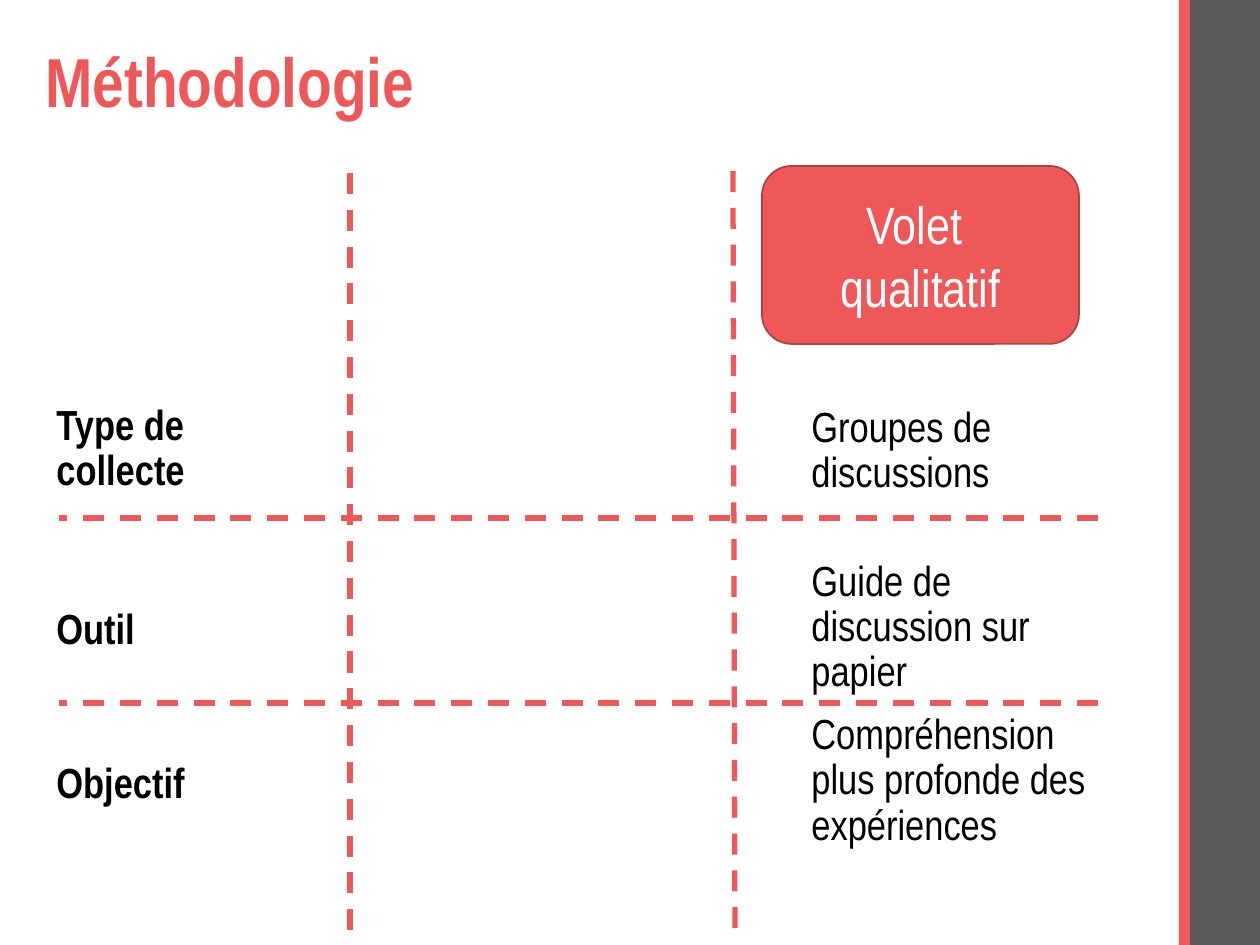
"""Build the "Méthodologie" slide: a dashed grid with a qualitative column."""
from lxml import etree
from pptx import Presentation
from pptx.dml.color import RGBColor
from pptx.enum.dml import MSO_LINE
from pptx.enum.shapes import MSO_CONNECTOR, MSO_SHAPE as SHAPE
from pptx.enum.text import MSO_ANCHOR as ANCHOR, PP_ALIGN as ALIGN
from pptx.oxml.ns import qn
from pptx.util import Pt

PX = 914400 // 126
CORAL = RGBColor(0xEE, 0x58, 0x59)
BRICK = RGBColor(0xB0, 0x41, 0x42)
GRAY = RGBColor(0x5A, 0x5A, 0x5A)
BLACK = RGBColor(0, 0, 0)
WHITE = RGBColor(255, 255, 255)


def add_shape(kind, box, fill):
    sp = s.shapes.add_shape(kind, *[v * PX for v in box])
    sp.shadow.inherit = False
    sp.fill.solid()
    sp.fill.fore_color.rgb = fill
    sp.line.fill.background()
    return sp


def add_run(p, text, size, color, bold=False):
    r = p.add_run()
    r.text = text
    r.font.name = "Arial Narrow"
    r.font.size = Pt(size)
    r.font.bold = bold
    r.font.color.rgb = color


prs = Presentation()
prs.slide_width, prs.slide_height = 1260 * PX, 945 * PX
s = prs.slides.add_slide(prs.slide_layouts[6])

add_shape(SHAPE.RECTANGLE, (1188, 0, 72, 945), GRAY)
add_shape(SHAPE.RECTANGLE, (1179, 0, 11, 945), CORAL)

TEXTS = [
    ((33, 50, 1095, 71), ANCHOR.MIDDLE, 39.6, CORAL, True, [("Méthodologie", 0)]),
    ((44, 398, 284, 461), ANCHOR.TOP, 24, BLACK, True,
     [("Type de collecte", 0), ("Outil", 65), ("Objectif", 62)]),
    ((799, 400, 307, 545), ANCHOR.TOP, 24, BLACK, False,
     [("Groupes de discussions", 0),
      ("Guide de discussion sur papier", 36),
      ("Compréhension plus profonde des expériences", 10)]),
]
for box, anchor, size, color, bold, paragraphs in TEXTS:
    tf = s.shapes.add_textbox(*[v * PX for v in box]).text_frame
    tf.word_wrap = True
    tf.vertical_anchor = anchor
    for i, (text, before) in enumerate(paragraphs):
        p = tf.add_paragraph() if i else tf.paragraphs[0]
        p.line_spacing = 0.9
        p.space_before = Pt(before)
        add_run(p, text, size, color, bold)

sp = add_shape(SHAPE.ROUNDED_RECTANGLE, (762, 166, 317, 178), CORAL)
sp.line.color.rgb = BRICK
sp.line.width = Pt(1)
tf = sp.text_frame
tf.word_wrap = True
tf.vertical_anchor = ANCHOR.MIDDLE
p = tf.paragraphs[0]
p.alignment = ALIGN.CENTER
add_run(p, "Volet ", 30, WHITE)
p.add_line_break()
add_run(p, "qualitatif", 30, WHITE)

GRID = [(350, 173, 350, 934), (733, 171, 735, 934),
        (1098, 518, 59, 518), (1098, 703, 59, 703)]
for ends in GRID:
    line = s.shapes.add_connector(MSO_CONNECTOR.STRAIGHT, *[v * PX for v in ends])
    line.line.color.rgb = CORAL
    line.line.width = Pt(3)
    line.line.dash_style = MSO_LINE.DASH
    etree.SubElement(line._element.spPr, qn("a:effectLst"))

prs.save("out.pptx")
